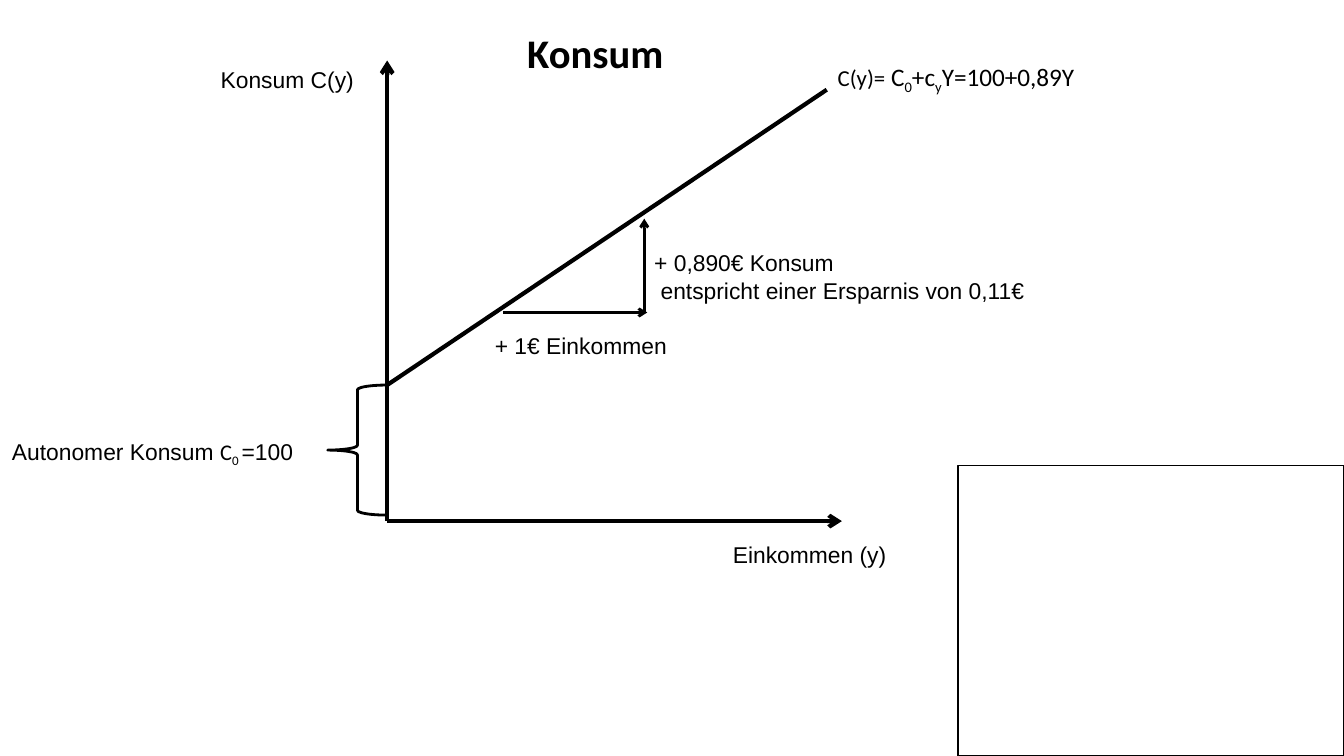
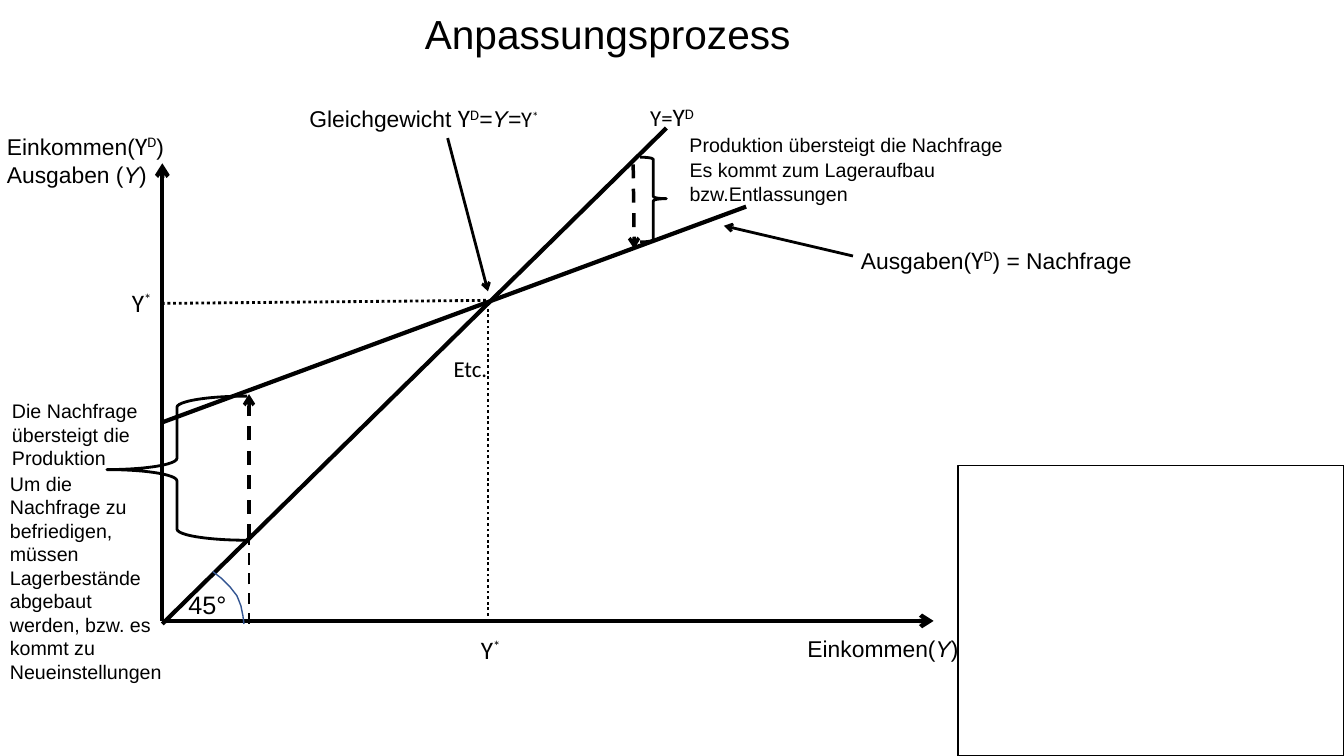
import pptx
import pptx.util
import pptx.dml.color
import pptx.enum.dml
import pptx.enum.shapes
import pptx.enum.text
import pptx.oxml.ns
import lxml.etree

PX = 9144
INK = "000000"
BLUE = "325491"
KIND = pptx.enum.shapes.MSO_SHAPE
DASH = pptx.enum.dml.MSO_LINE
FIT = pptx.enum.text.MSO_AUTO_SIZE
ANCHOR = pptx.enum.text.MSO_ANCHOR
FRAME = (950, 462, 383, 288)

FORMS = {
    "head": {"size": 29, "name": "Arial"},
    "bold": {"size": 29, "name": "Calibri", "bold": True},
    "text": {"size": 16.3, "name": "Arial"},
    "slant": {"size": 16.3, "name": "Arial", "italic": True},
    "note": {"size": 14, "name": "Arial"},
    "angle": {"size": 18, "name": "Arial"},
    "small": {"size": 16, "name": "Calibri"},
    "plain": {"size": 16.3, "name": "Calibri"},
    "math": {"size": 18, "name": "Calibri"},
}
SHIFT = {"^": "30000", "_": "-25000"}

STAR = [[("math", "Y"), ("math^", "*")]]
YD = [("math", "Y"), ("math^", "D")]

PAGES = [
    {
        "title": (175, 11, 831, 81, "bold", "Konsum", ANCHOR.MIDDLE),
        "lines": [
            (384, 517, 835, 517, 3, None, True),
            (384, 517, 384, 60, 3, None, True),
            (384, 382, 820, 89, 3, None, False),
            (499, 310, 642, 310, 2, None, True),
            (639, 310, 639, 217, 2, None, True),
        ],
        "braces": [(KIND.LEFT_BRACE, 325, 382, 59, 129, 0.5)],
        "texts": [
            (2, 429, 304, 38, False, [[("text", "Autonomer Konsum "), ("small", "C"),
                                       ("small_", "0 "), ("text", "=100")]]),
            (717, 531, 174, 38, False, [[("text", "Einkommen (y)")]]),
            (209, 60, 164, 38, True, [[("text", "Konsum C(y)")]]),
            (639, 242, 392, 65, False, [[("text", "+ 0,890€ Konsum")],
                                        [("text", " entspricht einer Ersparnis von 0,11€")]]),
            (481, 324, 253, 38, True, [[("text", "+ 1€ Einkommen")]]),
            (821, 56, 260, 40, False, [[("plain", "C(y)="), ("math", " C"), ("math_", "0"),
                                        ("math", "+c"), ("math_", "y"),
                                        ("math", "Y=100+0,89Y")]]),
        ],
        "curves": [],
    },
    {
        "title": (195, 4, 816, 70, "head", "Anpassungsprozess", ANCHOR.TOP),
        "lines": [
            (161, 616, 926, 616, 3, None, True),
            (161, 616, 161, 162, 3, None, True),
            (161, 419, 740, 205, 3, None, False),
            (161, 619, 661, 127, 3, None, False),
            (846, 254, 718, 224, 2, None, True),
            (247, 619, 247, 534, 2, DASH.DASH, False),
            (247, 534, 247, 391, 2.5, DASH.DASH, True),
            (444, 137, 484, 289, 2, None, True),
            (484, 611, 484, 302, 2, DASH.ROUND_DOT, False),
            (482, 298, 161, 301, 2, DASH.ROUND_DOT, False),
            (628, 163, 629, 247, 2.5, DASH.DASH, True),
        ],
        "braces": [
            (KIND.LEFT_BRACE, 106, 393, 139, 143, 0.51),
            (KIND.RIGHT_BRACE, 635, 156, 26, 84, 0.49),
        ],
        "texts": [
            (791, 625, 172, 38, False, [[("text", "Einkommen("), ("slant", "Y"), ("text", ")")]]),
            (-3, 124, 186, 68, False, [[("text", "Einkommen("), *YD, ("text", ")")],
                                       [("text", "Ausgaben ("), ("slant", "Y"), ("text", ")")]]),
            (297, 97, 293, 40, True, [[("text", "Gleichgewicht "), *YD, ("slant", "=Y="),
                                       ("small", "Y"), ("small^", "*")]]),
            (844, 237, 293, 40, False, [[("text", "Ausgaben("), *YD, ("text", ") = Nachfrage")]]),
            (0, 463, 173, 222, True, [[("note", "Um die Nachfrage zu befriedigen,")],
                                      [("note", "müssen Lagerbestände abgebaut")],
                                      [("note", "werden, bzw. es kommt zu")],
                                      [("note", "Neueinstellungen")]]),
            (440, 347, 54, 38, False, [[("plain", "Etc.")]]),
            (635, 96, 65, 40, False, [[("plain", "Y="), *YD]]),
            (2, 391, 181, 81, True, [[("note", "Die Nachfrage")],
                                     [("note", "übersteigt die Produktion")]]),
            (177, 580, 58, 40, False, [[("angle", "45°")]]),
            (467, 624, 41, 40, False, STAR),
            (121, 280, 41, 40, False, STAR),
            (674, 127, 343, 34, True, [[("note", "Produktion übersteigt die Nachfrage")]]),
            (674, 152, 265, 57, False, [[("note", "Es kommt zum Lageraufbau")],
                                        [("note", "bzw.Entlassungen")]]),
        ],
        "curves": [[(211, 567), (220, 574), (228, 582), (235, 591), (239, 601), (241, 611), (242, 619)]],
    },
]


def hue(code):
    return pptx.dml.color.RGBColor.from_string(code)


def draw(item, code, width, dash=None):
    item.line.color.rgb = hue(code)
    for key, val in {"width": pptx.util.Pt(width), "dash_style": dash}.items():
        setattr(item.line, key, val)


deck = pptx.Presentation()
deck.slide_width, deck.slide_height = 1333 * PX, 750 * PX

for page in PAGES:
    slide = deck.slides.add_slide(deck.slide_layouts[6])
    shapes = slide.shapes

    for *ends, width, dash, arrow in page["lines"]:
        line = shapes.add_connector(pptx.enum.shapes.MSO_CONNECTOR.STRAIGHT, *[n * PX for n in ends])
        draw(line, INK, width, dash)
        if arrow:
            lxml.etree.SubElement(line.line._get_or_add_ln(), pptx.oxml.ns.qn("a:tailEnd"), type="arrow")
        lxml.etree.SubElement(line._element.spPr, pptx.oxml.ns.qn("a:effectLst"))

    solids = []
    for kind, *box, mid in page["braces"]:
        brace = shapes.add_shape(kind, *[n * PX for n in box])
        brace.adjustments[0], brace.adjustments[1] = 0.08, mid
        solids.append((brace, INK, 2))
    for first, *rest in page["curves"]:
        path = shapes.build_freeform(*first, scale=PX)
        path.add_line_segments(rest, close=False)
        solids.append((path.convert_to_shape(), BLUE, 1))
    frame = shapes.add_shape(KIND.RECTANGLE, *[n * PX for n in FRAME])
    solids.append((frame, INK, 1))
    for solid, code, width in solids:
        solid.shadow.inherit = False
        solid.fill.background()
        draw(solid, code, width)

    *box, form, words, anchor = page["title"]
    title = (*box, True, [[(form, words)]])
    for *box, wrap, paras in [title, *page["texts"]]:
        label = shapes.add_textbox(*[n * PX for n in box])
        frame = label.text_frame
        top = paras is title[-1]
        looks = {
            "word_wrap": wrap,
            "auto_size": FIT.NONE if top else FIT.SHAPE_TO_FIT_TEXT,
            "vertical_anchor": anchor if top else ANCHOR.TOP,
        }
        for key, val in looks.items():
            setattr(frame, key, val)
        for num, runs in enumerate(paras):
            para = frame.add_paragraph() if num else frame.paragraphs[0]
            if top:
                para.alignment = pptx.enum.text.PP_ALIGN.CENTER
            for form, words in runs:
                run = para.add_run()
                run.text = words
                run.font.color.rgb = hue(INK)
                for key, val in FORMS[form.rstrip("^_")].items():
                    setattr(run.font, key, pptx.util.Pt(val) if key == "size" else val)
                if form[-1] in SHIFT:
                    run._r.get_or_add_rPr().set("baseline", SHIFT[form[-1]])

deck.save("out.pptx")
